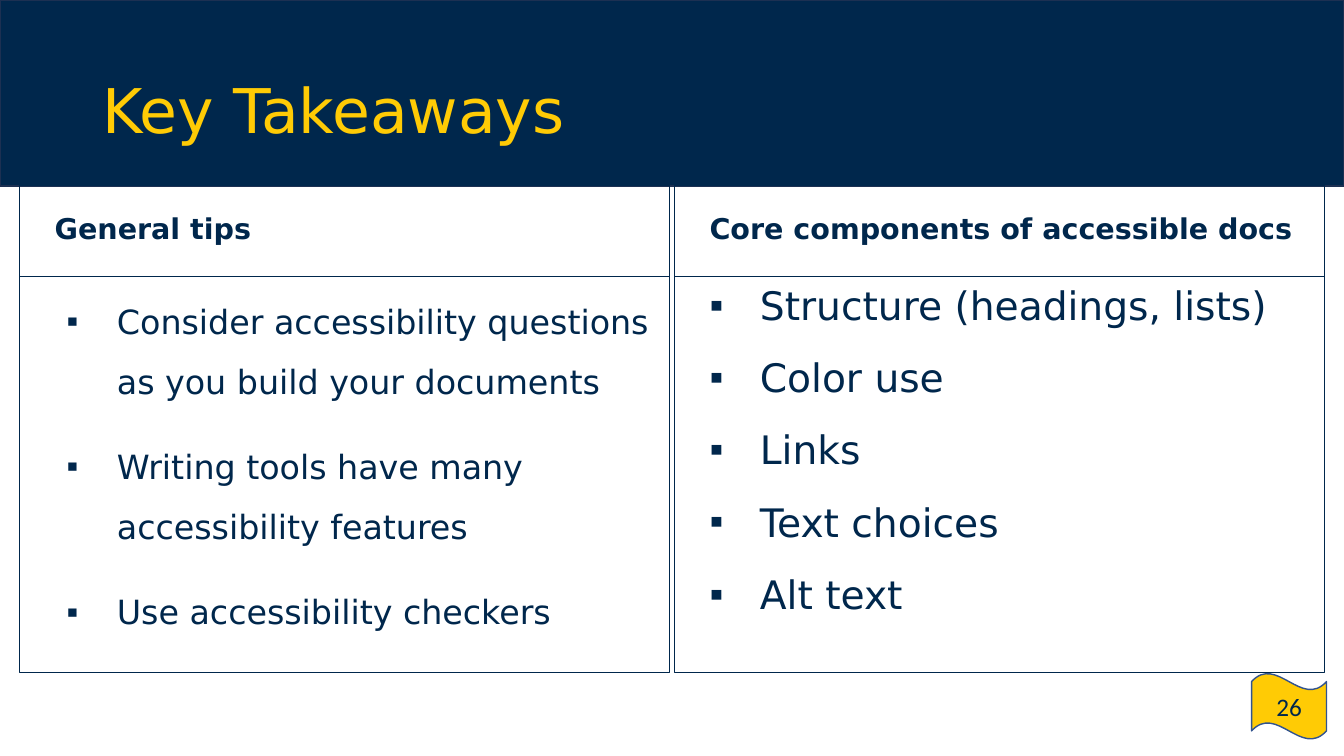
"""Build the Key Takeaways slide with two headed bullet columns."""
import pptx
import pptx.dml.color
import pptx.enum.shapes
import pptx.enum.text
import pptx.oxml
import pptx.oxml.ns
import pptx.util

Pt = pptx.util.Pt
ALIGN = pptx.enum.text.PP_ALIGN
ANCHOR = pptx.enum.text.MSO_ANCHOR
SHAPE = pptx.enum.shapes.MSO_SHAPE

TITLE = "Key Takeaways"
PAGE_NUMBER = "26"
COLUMNS = [
    {
        "heading": "General tips",
        "points": [
            "Consider accessibility questions as you build your documents",
            "Writing tools have many accessibility features",
            "Use accessibility checkers",
        ],
        "size": 23.8, "spacing": 1.5, "indent": 62.5,
    },
    {
        "heading": "Core components of accessible docs",
        "points": ["Structure (headings, lists)", "Color use", "Links",
                   "Text choices", "Alt text"],
        "size": 28, "spacing": 1.0, "indent": 54,
    },
]
COLORS = {"navy": "00274C", "maize": "FFCB05", "band_edge": "1C3052", "flag_edge": "31538F"}
FONT = "DejaVu Sans"

SLIDE_WIDTH, SLIDE_HEIGHT = 960, 540
BAND_HEIGHT = 133
COLUMN_LEFT, COLUMN_TOP, COLUMN_WIDTH, COLUMN_GAP = 13.8, 132.2, 464.4, 3.4
HEADING_HEIGHT, POINTS_HEIGHT = 65, 283


def color(name):
    return pptx.dml.color.RGBColor.from_string(COLORS[name])


def place(shape, left, top, width, height):
    box = {"left": left, "top": top, "width": width, "height": height}
    for side, length in box.items():
        setattr(shape, side, Pt(length))


def outline(shape, name, width):
    shape.line.color.rgb = color(name)
    shape.line.width = Pt(width)


def write(shape, texts, anchor, font, paragraph_format):
    frame = shape.text_frame
    frame.text = "\n".join(texts)
    frame.word_wrap = True
    frame.auto_size = pptx.enum.text.MSO_AUTO_SIZE.NONE
    frame.vertical_anchor = anchor
    for paragraph in frame.paragraphs:
        for name, value in paragraph_format.items():
            setattr(paragraph, name, value)
        text_font = paragraph.runs[0].font
        for name, value in font.items():
            if name == "color":
                text_font.color.rgb = color(value)
            else:
                setattr(text_font, name, value)


def indent(shape, left, first, bullet=None):
    for paragraph in shape.text_frame.paragraphs:
        properties = paragraph._p.get_or_add_pPr()
        properties.set("marL", str(Pt(left)))
        properties.set("indent", str(Pt(first)))
        if bullet:
            namespace = pptx.oxml.ns.nsdecls("a")
            for xml in (
                f'<a:buClr {namespace}><a:srgbClr val="{COLORS["navy"]}"/></a:buClr>',
                f'<a:buChar {namespace} char="{bullet}"/>',
            ):
                properties.append(pptx.oxml.parse_xml(xml))


def add_backdrop(slide, kind, box, fill, edge, depth):
    shape = slide.shapes.add_shape(kind, *map(Pt, box))
    shape.shadow.inherit = False
    shape.fill.solid()
    shape.fill.fore_color.rgb = color(fill)
    outline(shape, edge, 1)
    shape.element.getparent().insert(depth, shape.element)
    return shape


def add_column(heading, points, column, left):
    place(heading, left, COLUMN_TOP, COLUMN_WIDTH, HEADING_HEIGHT)
    place(points, left, COLUMN_TOP + HEADING_HEIGHT, COLUMN_WIDTH, POINTS_HEIGHT)
    write(heading, [column["heading"]], ANCHOR.MIDDLE,
          {"name": FONT, "size": Pt(20.4), "bold": True, "color": "navy"},
          {"line_spacing": 0.9, "space_before": Pt(18)})
    write(points, column["points"], ANCHOR.TOP,
          {"name": FONT, "size": Pt(column["size"]), "color": "navy"},
          {"line_spacing": column["spacing"], "space_before": Pt(18)})
    indent(heading, 36, -18)
    indent(points, column["indent"], -36, "▪")
    for box in (heading, points):
        outline(box, "navy", 0.75)


def main():
    deck = pptx.Presentation()
    deck.slide_width, deck.slide_height = Pt(SLIDE_WIDTH), Pt(SLIDE_HEIGHT)
    slide = deck.slides.add_slide(deck.slide_layouts.get_by_name("Comparison"))

    add_backdrop(slide, SHAPE.RECTANGLE, (0, 0, SLIDE_WIDTH, BAND_HEIGHT),
                 "navy", "band_edge", 2)
    flag = add_backdrop(slide, SHAPE.WAVE, (894, 481, 53.5, 47),
                        "maize", "flag_edge", 3)
    write(flag, [PAGE_NUMBER], ANCHOR.MIDDLE,
          {"name": "Calibri", "size": Pt(18), "color": "navy"},
          {"alignment": ALIGN.CENTER})

    title = slide.shapes.title
    place(title, 66, 29, 828, 104)
    write(title, [TITLE], ANCHOR.MIDDLE,
          {"name": FONT, "size": Pt(44), "color": "maize"},
          {"alignment": ALIGN.LEFT, "line_spacing": 0.9})

    boxes = list(slide.placeholders)[1:]
    for number, column in enumerate(COLUMNS):
        heading, points = boxes[2 * number:2 * number + 2]
        left = COLUMN_LEFT + number * (COLUMN_WIDTH + COLUMN_GAP)
        add_column(heading, points, column, left)

    deck.save("out.pptx")


if __name__ == "__main__":
    main()
